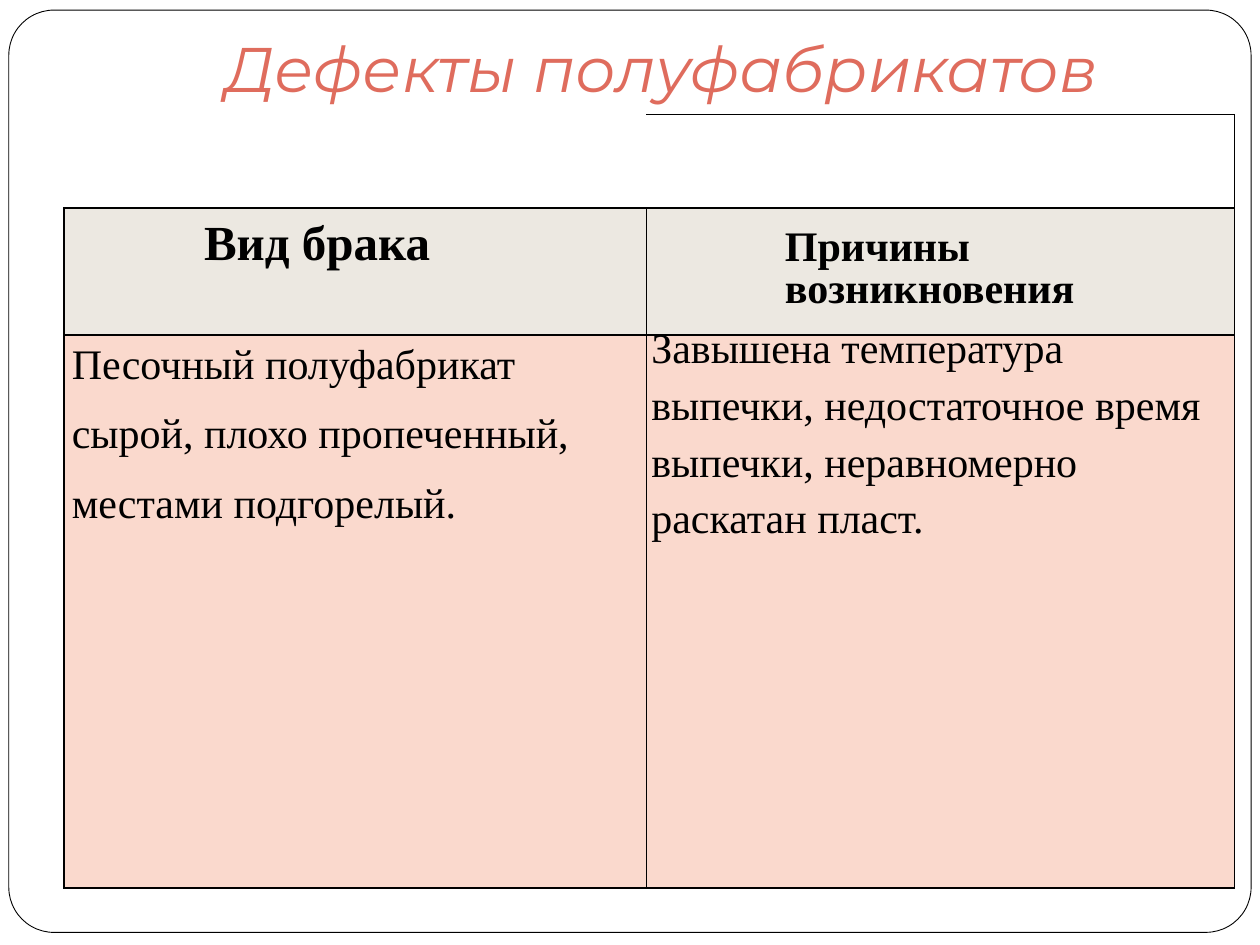
from lxml.etree import SubElement
from pptx import Presentation
from pptx.dml.color import RGBColor
from pptx.enum.shapes import MSO_SHAPE as Preset
from pptx.enum.text import MSO_ANCHOR as Anchor, PP_ALIGN as Align
from pptx.oxml.ns import qn
from pptx.util import Inches, Pt

COLORS = {
    "paper": "FFFFFF",
    "ink": "000000",
    "title": "DF6C5D",
    "header": "ECE8E1",
    "body": "FAD9CD",
}
WIDTH, HEIGHT = 10, 7.5
COLUMNS = [4.62, 4.67]
ROWS = [0.74, 1.01, 4.39]
BORDER_TAGS = {"left": "a:lnL", "right": "a:lnR", "top": "a:lnT", "bottom": "a:lnB"}

# first: height of the first line, pitch: height of each later line, in points
HEADERS = [
    dict(lines=["Вид брака"], size=28, indent=1.11, first=36, pitch=36),
    dict(lines=["Причины", "возникновения"], size=24, indent=1.1, first=36, pitch=24),
]
DEFECT = [
    dict(
        lines=["Песочный полуфабрикат", "сырой, плохо пропеченный,", "местами подгорелый."],
        size=24, indent=0.06, first=30.6, pitch=39.6,
    ),
    dict(
        lines=["Завышена температура", "выпечки, недостаточное время",
               "выпечки, неравномерно", "раскатан пласт."],
        size=24, indent=0.04, first=21.6, pitch=32.4,
    ),
]


def color(name):
    return RGBColor.from_string(COLORS[name])


def apply(target, **values):
    for name, value in values.items():
        setattr(target, name, value)


class SlideBuilder:
    def __init__(self, deck):
        self.slide = deck.slides.add_slide(deck.slide_layouts[5])
        self.heading_font, self.text_font = "Montserrat", "Times New Roman"

    def frame(self, margin_x, margin_y, bottom):
        """Draw the rounded page outline behind everything else."""
        outline = self.slide.shapes.add_shape(
            Preset.ROUNDED_RECTANGLE, Inches(margin_x), Inches(margin_y),
            Inches(WIDTH - 2 * margin_x), Inches(HEIGHT - margin_y - bottom))
        outline.adjustments[0] = 0.049
        outline.shadow.inherit = False
        outline.fill.solid()
        outline.fill.fore_color.rgb = color("paper")
        outline.line.color.rgb = color("ink")
        outline.line.width = Pt(0.5)
        self.slide.shapes._spTree.insert(2, outline._element)

    def title(self, text, left, top, width, height):
        heading = self.slide.shapes.title
        apply(heading, left=Inches(left), top=Inches(top),
              width=Inches(width), height=Inches(height))
        apply(heading.text_frame, text=text, vertical_anchor=Anchor.TOP,
              margin_top=0, word_wrap=True)
        line = heading.text_frame.paragraphs[0]
        apply(line, alignment=Align.CENTER, line_spacing=0.9)
        self.style(line.runs[0], self.heading_font, 36, "title", italic=True)

    def style(self, run, font, size, shade, **extra):
        apply(run.font, name=font, size=Pt(size), **extra)
        run.font.color.rgb = color(shade)

    def table(self, left, top):
        grid = self.slide.shapes.add_table(
            len(ROWS), len(COLUMNS), Inches(left), Inches(top),
            Inches(sum(COLUMNS)), Inches(sum(ROWS))).table
        apply(grid, first_row=False, horz_banding=False)
        for column, width in zip(grid.columns, COLUMNS):
            column.width = Inches(width)
        for row, height in zip(grid.rows, ROWS):
            row.height = Inches(height)
        return grid

    def borders(self, cell, sides):
        """Rule the given sides of a cell and clear the others."""
        properties = cell._tc.get_or_add_tcPr()
        for position, (side, tag) in enumerate(BORDER_TAGS.items()):
            rule = SubElement(properties, qn(tag), w=str(Pt(1)))
            properties.insert(position, rule)
            if side in sides:
                paint = SubElement(rule, qn("a:solidFill"))
                SubElement(paint, qn("a:srgbClr"), val=COLORS["ink"])
            else:
                SubElement(rule, qn("a:noFill"))

    def blank_cell(self, cell, sides):
        cell.fill.background()
        self.borders(cell, sides)

    def text_cell(self, cell, shade, bold, lines, size, indent, first, pitch):
        cell.fill.solid()
        cell.fill.fore_color.rgb = color(shade)
        self.borders(cell, BORDER_TAGS)
        apply(cell, text="\n".join(lines), margin_left=Inches(indent),
              margin_right=0, margin_top=0, margin_bottom=0)
        for number, line in enumerate(cell.text_frame.paragraphs):
            line.line_spacing = Pt(pitch if number else first)
            self.style(line.runs[0], self.text_font, size, "ink", bold=bold)


def main():
    deck = Presentation()
    apply(deck, slide_width=Inches(WIDTH), slide_height=Inches(HEIGHT))
    page = SlideBuilder(deck)
    page.frame(0.07, 0.08, bottom=0.1)
    page.title("Дефекты полуфабрикатов", 1, 0.3, 8.5, 1.25)

    defects = page.table(0.51, 0.91)
    page.blank_cell(defects.cell(0, 0), ["bottom"])
    page.blank_cell(defects.cell(0, 1), ["top", "right", "bottom"])
    for row, (shade, bold, entries) in enumerate(
            [("header", True, HEADERS), ("body", False, DEFECT)], start=1):
        for column, entry in enumerate(entries):
            page.text_cell(defects.cell(row, column), shade, bold, **entry)

    deck.save("out.pptx")


if __name__ == "__main__":
    main()
